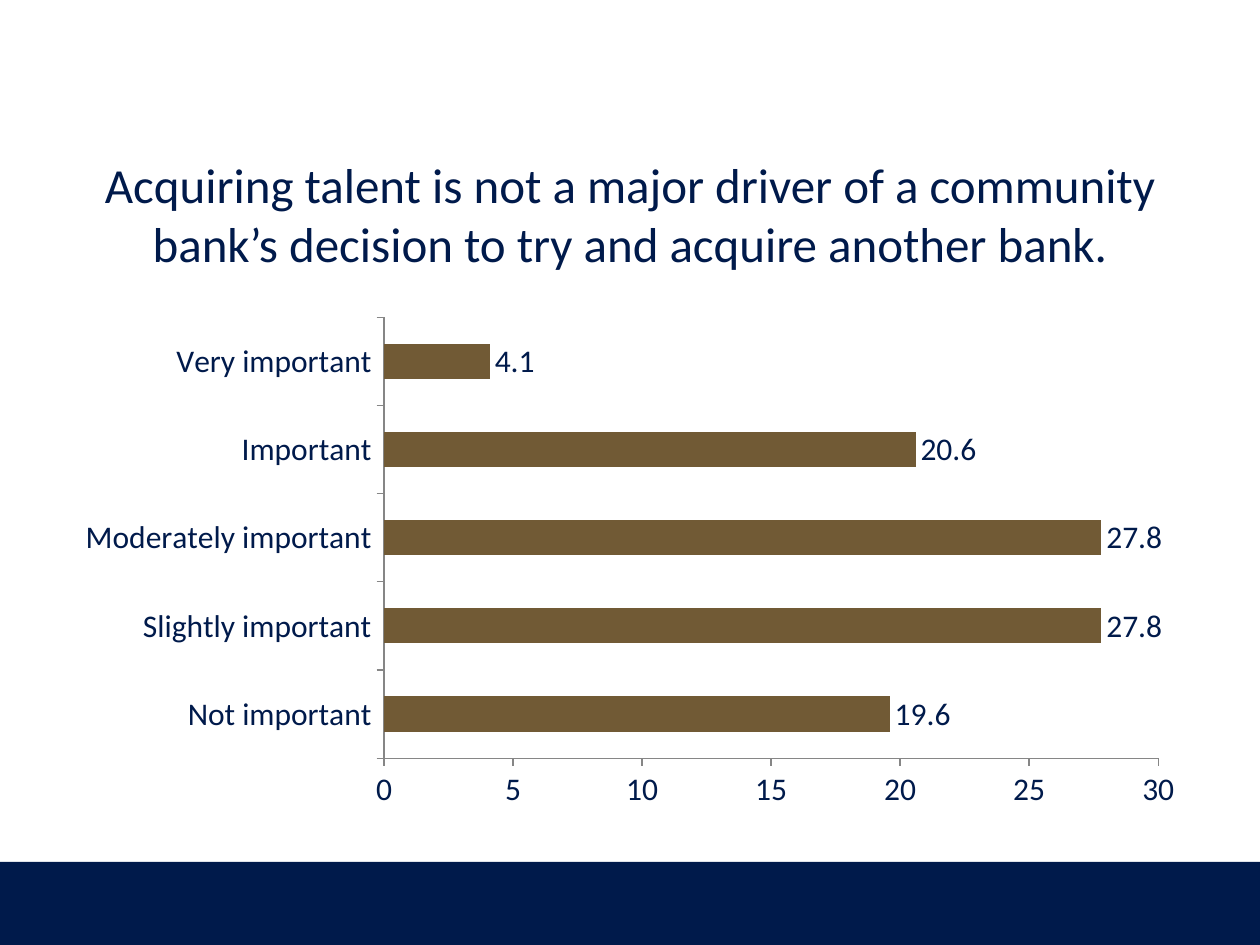
import pptx
import pptx.util
import pptx.chart.data
import pptx.dml.color
import pptx.enum.chart
import pptx.enum.shapes
import pptx.enum.text

Pt = pptx.util.Pt
HUES = {"navy": "001A4B", "brown": "715A35", "grey": "868686", "white": "FFFFFF"}


def hue(name):
    """Return the named colour."""
    return pptx.dml.color.RGBColor.from_string(HUES[name])


def write(frame, text, face="Calibri", size=28, color="navy", align="CENTER"):
    """Put formatted text into a text frame."""
    line = frame.paragraphs[0]
    line.text = text
    line.alignment = getattr(pptx.enum.text.PP_ALIGN, align)
    line.font.name = face
    line.font.size = Pt(size)
    line.font.color.rgb = hue(color)


class Deck:
    """Hold the style and the current slide."""

    def __init__(self, width, height, face="Calibri"):
        """Start a deck with one blank slide."""
        self.show = pptx.Presentation()
        self.show.slide_width = Pt(width)
        self.show.slide_height = Pt(height)
        self.face = face
        self.slide = self.show.slides.add_slide(self.show.slide_layouts[6])
        fill = self.slide.background.fill
        fill.solid()
        fill.fore_color.rgb = hue("white")

    def band(self, box, color):
        """Add a plain filled band."""
        kind = pptx.enum.shapes.MSO_SHAPE.RECTANGLE
        shape = self.slide.shapes.add_shape(kind, *map(Pt, box))
        shape.shadow.inherit = False
        shape.fill.solid()
        shape.fill.fore_color.rgb = hue(color)
        shape.line.fill.background()

    def title(self, box, text, **style):
        """Add a wrapped text box, centred in height."""
        frame = self.slide.shapes.add_textbox(*map(Pt, box)).text_frame
        frame.word_wrap = True
        frame.vertical_anchor = pptx.enum.text.MSO_ANCHOR.MIDDLE
        write(frame, text, face=self.face, **style)

    def bars(self, box, rows, size=18):
        """Add a bar chart with value labels."""
        enum = pptx.enum.chart
        data = pptx.chart.data.CategoryChartData()
        data.categories = list(rows)
        data.add_series("Series 1", rows.values())
        kind = enum.XL_CHART_TYPE.BAR_CLUSTERED
        chart = self.slide.shapes.add_chart(kind, *map(Pt, box), data).chart
        chart.has_legend = False
        chart.has_title = False
        chart.font.name = self.face
        chart.font.size = Pt(size)
        chart.font.color.rgb = hue("navy")
        for axis in (chart.category_axis, chart.value_axis):
            axis.has_major_gridlines = False
            axis.major_tick_mark = enum.XL_TICK_MARK.OUTSIDE
            axis.minor_tick_mark = enum.XL_TICK_MARK.NONE
            axis.format.line.color.rgb = hue("grey")
            axis.format.line.width = Pt(0.75)
        scale = chart.value_axis
        scale.minimum_scale, scale.maximum_scale, scale.major_unit = 0, 30, 5
        plot = chart.plots[0]
        plot.gap_width = 150
        plot.vary_by_categories = False
        fill = plot.series[0].format.fill
        fill.solid()
        fill.fore_color.rgb = hue("brown")
        plot.has_data_labels = True
        labels = plot.data_labels
        labels.show_value = True
        labels.number_format = "#,##0.0"
        labels.number_format_is_linked = False
        labels.position = enum.XL_LABEL_POSITION.OUTSIDE_END


def main():
    """Build and save the slide."""
    deck = Deck(720, 540)
    deck.band((0, 492.5, 720, 47.5), "navy")
    deck.title(
        (36, 77, 648, 90),
        "Acquiring talent is not a major driver of a community "
        "bank’s decision to try and acquire another bank.",
    )
    deck.bars(
        (36, 175.5, 648, 292.5),
        {
            "Not important": 19.6,
            "Slightly important": 27.8,
            "Moderately important": 27.8,
            "Important": 20.6,
            "Very important": 4.1,
        },
    )
    deck.show.save("out.pptx")


if __name__ == "__main__":
    main()
